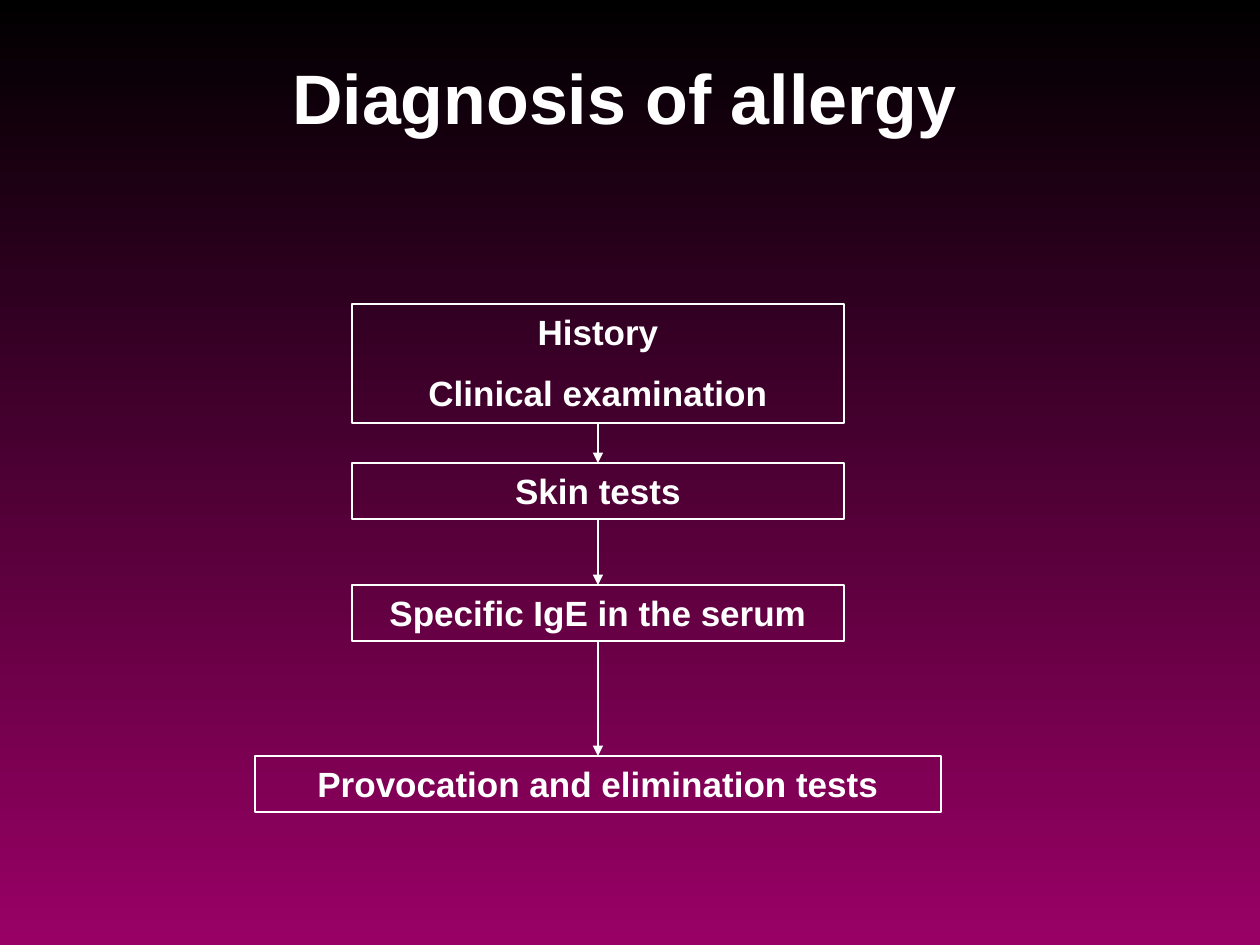
from lxml.etree import SubElement
from pptx import Presentation
from pptx.dml.color import RGBColor
from pptx.enum.shapes import MSO_CONNECTOR, MSO_SHAPE
from pptx.enum.text import MSO_ANCHOR, PP_ALIGN
from pptx.oxml.ns import qn
from pptx.util import Pt

PX = 914400 / 126
WHITE = RGBColor(0xFF, 0xFF, 0xFF)
BLACK = RGBColor(0x00, 0x00, 0x00)
MAGENTA = RGBColor(0x99, 0x00, 0x66)

TITLE_BOX = (84, 66, 1081, 158)
FLOW_BOX = (255, 304, 686, 508)
# Text, offset from the top of the flow, width, height
STEPS = [
    ("History\nClinical examination", 0, 492, 119),
    ("Skin tests", 159, 492, 56),
    ("Specific IgE in the serum", 281, 492, 56),
    ("Provocation and elimination tests", 452, 686, 56),
]


def px(*lengths):
    return [round(length * PX) for length in lengths]


def write_text(shape, text, size, space_before=0):
    """Fill a shape with centred bold white text."""
    text_frame = shape.text_frame
    text_frame.word_wrap = True
    text_frame.text = text
    for paragraph in text_frame.paragraphs:
        paragraph.alignment = PP_ALIGN.CENTER
        paragraph.space_before = Pt(space_before)
        for run in paragraph.runs:
            run.font.name = "Arial"
            run.font.size = Pt(size)
            run.font.bold = True
            run.font.color.rgb = WHITE


def paint_background(slide):
    fill = slide.background.fill
    fill.gradient()
    fill.gradient_angle = 270
    for stop, color in zip(fill.gradient_stops, (BLACK, MAGENTA)):
        stop.color.rgb = color


def add_title(slide, box, text):
    title = slide.shapes.add_textbox(*px(*box))
    write_text(title, text, 40)
    text_frame = title.text_frame
    text_frame.vertical_anchor = MSO_ANCHOR.BOTTOM
    text_frame.margin_top = 0
    text_frame.margin_bottom = px(87)[0]


def add_step(slide, box, text):
    step = slide.shapes.add_shape(MSO_SHAPE.RECTANGLE, *px(*box))
    step.shadow.inherit = False
    step.fill.background()
    step.line.color.rgb = WHITE
    step.line.width = Pt(0.75)
    write_text(step, text, 20, space_before=11)
    step.text_frame.vertical_anchor = MSO_ANCHOR.TOP


def add_down_arrow(slide, x, top, bottom):
    arrow = slide.shapes.add_connector(
        MSO_CONNECTOR.STRAIGHT, *px(x, top, x, bottom))
    arrow.line.color.rgb = WHITE
    arrow.line.width = Pt(1.5)
    SubElement(arrow.line._get_or_add_ln(), qn("a:tailEnd"), type="triangle")
    SubElement(arrow._element.spPr, qn("a:effectLst"))


def add_flow(slide, box, steps):
    """Stack the steps on the centre line of the box and join them by arrows."""
    left, top, width, _ = box
    center = left + width // 2
    for text, offset, step_width, height in steps:
        add_step(slide, (center - step_width // 2, top + offset,
                         step_width, height), text)
    for (_, offset, _, height), following in zip(steps, steps[1:]):
        add_down_arrow(slide, center, top + offset + height, top + following[1])


def main():
    presentation = Presentation()
    presentation.slide_width, presentation.slide_height = px(1260, 945)
    slide = presentation.slides.add_slide(presentation.slide_layouts[6])
    paint_background(slide)
    add_title(slide, TITLE_BOX, "Diagnosis of allergy")
    add_flow(slide, FLOW_BOX, STEPS)
    presentation.save("out.pptx")


if __name__ == "__main__":
    main()
